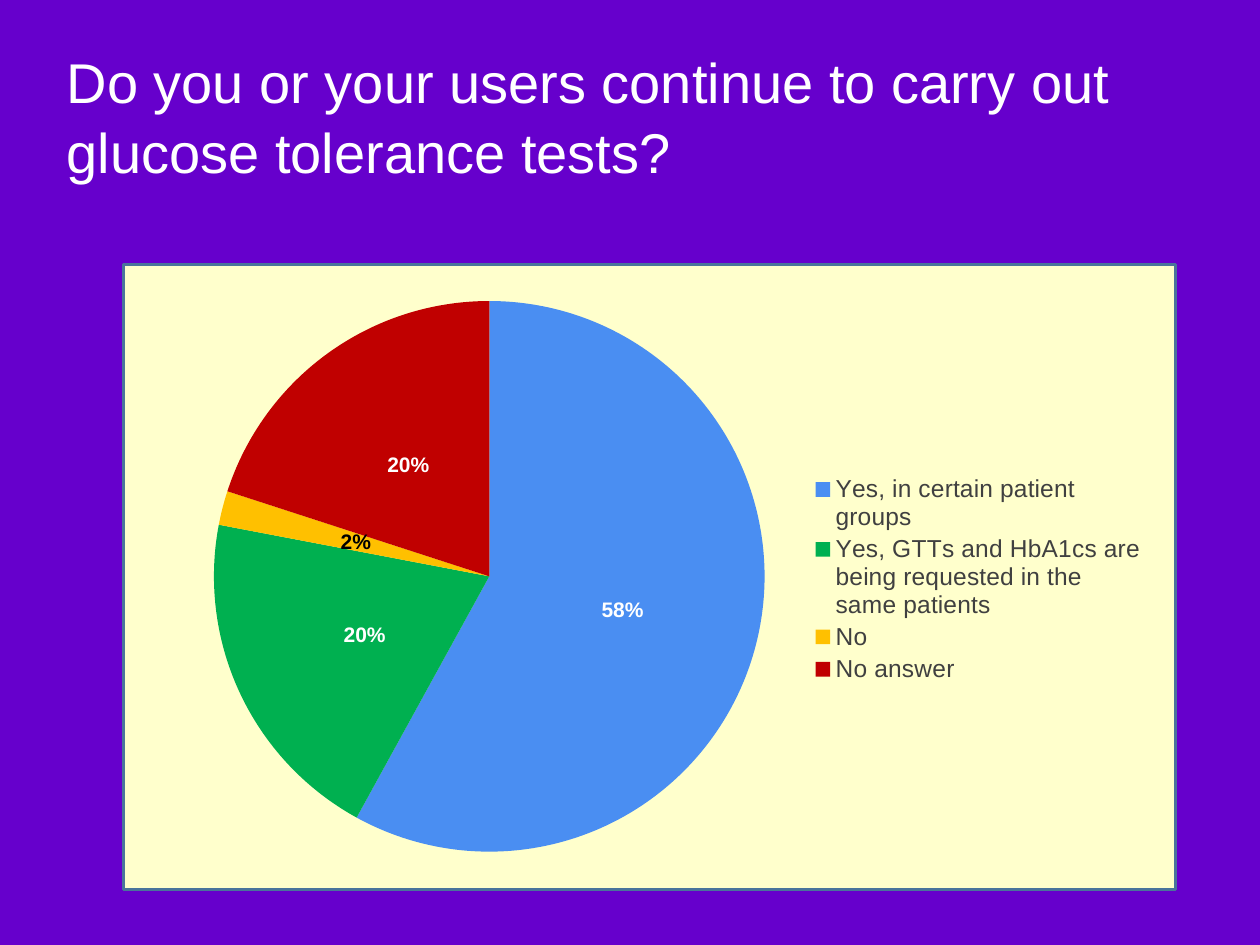
import pptx
import pptx.chart.data
import pptx.dml.color
import pptx.enum.chart
import pptx.enum.shapes
import pptx.enum.text
import pptx.oxml
import pptx.oxml.ns
import pptx.util
from pptx.util import Inches

THEME = {
    "background": "6600CC",
    "panel": "FFFFCC",
    "border": "49749B",
    "light": "FFFFFF",
    "dark": "000000",
    "legend": "404040",
    "font": "Arial",
    "title_size": 32,
    "legend_size": 14,
    "label_size": 12,
}
ANSWERS = [
    ("Yes, in certain patient groups", 58, "4A8EF2"),
    ("Yes, GTTs and HbA1cs are being requested in the same patients", 20, "00B050"),
    ("No", 2, "FFC000"),
    ("No answer", 20, "C00000"),
]


def style_font(font, size, color, bold=False):
    font.name = THEME["font"]
    font.size = pptx.util.Pt(THEME[size])
    font.bold = bold
    font.color.rgb = pptx.dml.color.RGBColor.from_string(THEME[color])


def set_layout(parent, position, inner, x, y, w, h):
    for old in parent.findall(pptx.oxml.ns.qn("c:layout")):
        parent.remove(old)
    target = '<c:layoutTarget val="inner"/>' if inner else ""
    sizes = "".join(f'<c:{tag} val="{value}"/>' for tag, value in zip("xywh", (x, y, w, h)))
    parent.insert(position, pptx.oxml.parse_xml(
        f'<c:layout {pptx.oxml.ns.nsdecls("c")}><c:manualLayout>{target}'
        f'<c:xMode val="edge"/><c:yMode val="edge"/>{sizes}</c:manualLayout></c:layout>'))


deck = pptx.Presentation()
deck.slide_width, deck.slide_height = Inches(10), Inches(7.5)
page = deck.slides.add_slide(deck.slide_layouts[5])
page.background.fill.solid()
page.background.fill.fore_color.rgb = pptx.dml.color.RGBColor.from_string(THEME["background"])

title = page.shapes.title
title.left, title.top, title.width, title.height = map(Inches, (0.43, 0.52, 9.21, 1))
title.text_frame.word_wrap = True
title.text_frame.auto_size = pptx.enum.text.MSO_AUTO_SIZE.NONE
title.text_frame.vertical_anchor = pptx.enum.text.MSO_ANCHOR.BOTTOM
para = title.text_frame.paragraphs[0]
para.alignment = pptx.enum.text.PP_ALIGN.LEFT
para.line_spacing = 1.05
span = para.add_run()
span.text = "Do you or your users continue to carry out glucose tolerance tests?"
style_font(span.font, "title_size", "light")

panel = page.shapes.add_shape(
    pptx.enum.shapes.MSO_SHAPE.RECTANGLE, *map(Inches, (0.98, 2.1, 8.35, 4.96)))
panel.shadow.inherit = False
panel.fill.solid()
panel.fill.fore_color.rgb = pptx.dml.color.RGBColor.from_string(THEME["panel"])
panel.line.color.rgb = pptx.dml.color.RGBColor.from_string(THEME["border"])
panel.line.width = pptx.util.Pt(1.5)

chart_data = pptx.chart.data.CategoryChartData()
chart_data.categories = [answer for answer, share, color in ANSWERS]
chart_data.add_series("Series 1", [share for answer, share, color in ANSWERS])
chart = page.shapes.add_chart(
    pptx.enum.chart.XL_CHART_TYPE.PIE,
    *map(Inches, (1.22, 2.25, 7.95, 4.65)), chart_data).chart
chart.has_title = False
style_font(chart.font, "label_size", "light")
set_layout(chart._chartSpace.chart.plotArea, 0, True, 0.06, 0.03, 0.55, 0.94)

chart.has_legend = True
legend = chart.legend
legend.position = pptx.enum.chart.XL_LEGEND_POSITION.RIGHT
legend.include_in_layout = False
style_font(legend.font, "legend_size", "legend")
set_layout(legend._element, 1, False, 0.66, 0.32, 0.33, 0.37)

plot = chart.plots[0]
plot.vary_by_categories = True
series = plot.series[0]
for index, (answer, share, color) in enumerate(ANSWERS):
    fill = series.points[index].format.fill
    fill.solid()
    fill.fore_color.rgb = pptx.dml.color.RGBColor.from_string(color)

labels = series.data_labels
labels.show_value = False
labels.show_percentage = True
labels.number_format = "0%"
labels.number_format_is_linked = False
labels.position = pptx.enum.chart.XL_LABEL_POSITION.CENTER
style_font(labels.font, "label_size", "light", True)

small_label = series.points[2].data_label
style_font(small_label.font, "label_size", "dark", True)
small_label.position = pptx.enum.chart.XL_LABEL_POSITION.CENTER
small_element = labels._element.find(pptx.oxml.ns.qn("c:dLbl"))
for tag, shown in (("c:showVal", "0"), ("c:showPercent", "1")):
    small_element.find(pptx.oxml.ns.qn(tag)).set("val", shown)

deck.save("out.pptx")
